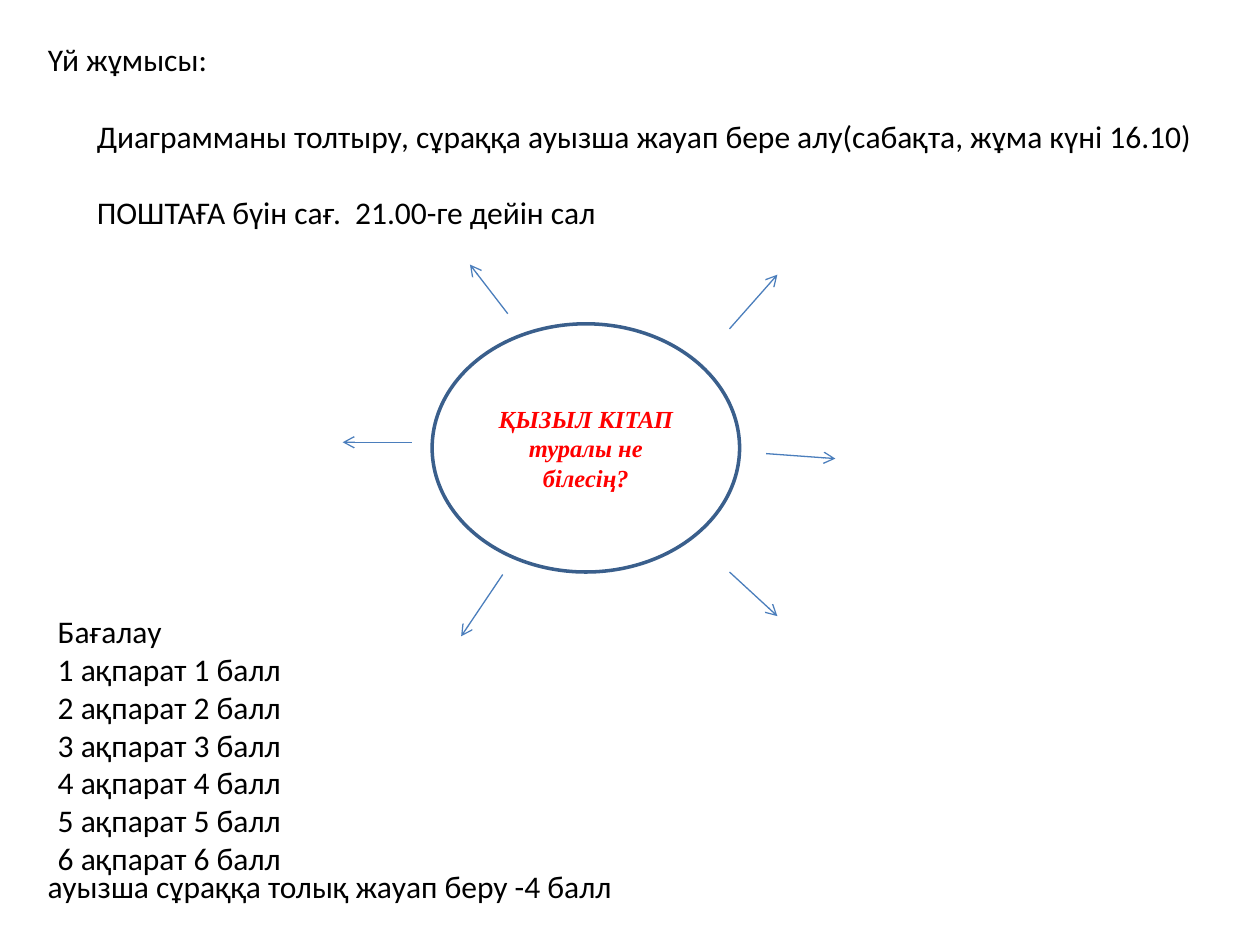
from lxml.etree import SubElement
from pptx import Presentation
from pptx.dml.color import RGBColor
from pptx.enum.shapes import MSO_CONNECTOR, MSO_SHAPE
from pptx.enum.text import MSO_ANCHOR, MSO_AUTO_SIZE, PP_ALIGN
from pptx.oxml.ns import qn
from pptx.util import Inches, Pt

COLORS = {"text": "000000", "accent": "FF0000", "paper": "FFFFFF",
          "outline": "3A5F8C", "arrow": "4B7EBC"}


def color(name):
    return RGBColor.from_string(COLORS[name])


class SlideBuilder:
    body_font = "Calibri"
    body_size = Pt(18)

    def __init__(self, slide):
        self.slide = slide

    def fill_text(self, frame, lines, gap):
        frame.word_wrap = False
        frame.auto_size = MSO_AUTO_SIZE.NONE
        frame.vertical_anchor = MSO_ANCHOR.TOP
        frame.text = "\n".join(lines)
        for index, paragraph in enumerate(frame.paragraphs):
            paragraph.alignment = PP_ALIGN.LEFT
            if index and gap:
                paragraph.space_before = Pt(gap)
            font = paragraph.font
            font.name, font.size = self.body_font, self.body_size
            font.color.rgb = color("text")

    def title(self, text, left, top, width, height):
        shape = self.slide.shapes.title
        shape.left, shape.top = Inches(left), Inches(top)
        shape.width, shape.height = Inches(width), Inches(height)
        self.fill_text(shape.text_frame, [text], 0)

    def text(self, lines, left, top, width, height, gap=0):
        box = self.slide.shapes.add_textbox(
            Inches(left), Inches(top), Inches(width), Inches(height))
        self.fill_text(box.text_frame, lines, gap)

    def ellipse(self, text, left, top, width, height):
        shape = self.slide.shapes.add_shape(
            MSO_SHAPE.OVAL, Inches(left), Inches(top), Inches(width), Inches(height))
        shape.shadow.inherit = False
        shape.fill.solid()
        shape.fill.fore_color.rgb = color("paper")
        shape.line.color.rgb = color("outline")
        shape.line.width = Pt(2)
        frame = shape.text_frame
        frame.word_wrap = True
        frame.vertical_anchor = MSO_ANCHOR.MIDDLE
        frame.text = text
        paragraph = frame.paragraphs[0]
        paragraph.alignment = PP_ALIGN.CENTER
        font = paragraph.font
        font.name, font.size = "Times New Roman", Pt(14)
        font.bold = font.italic = True
        font.color.rgb = color("accent")

    def arrow(self, start, end):
        connector = self.slide.shapes.add_connector(
            MSO_CONNECTOR.STRAIGHT, *map(Inches, start + end))
        connector.line.color.rgb = color("arrow")
        connector.line.width = Pt(0.75)
        SubElement(connector.line._get_or_add_ln(), qn("a:tailEnd"), type="arrow")
        SubElement(connector._element.spPr, qn("a:effectLst"))


def main():
    presentation = Presentation()
    presentation.slide_width, presentation.slide_height = Inches(10), Inches(7.5)
    builder = SlideBuilder(presentation.slides.add_slide(presentation.slide_layouts[5]))

    # Homework heading and task
    builder.title("Үй жұмысы:", 0.28, 0.27, 1.49, 0.4)
    builder.text(["Диаграмманы толтыру, сұраққа ауызша жауап бере алу(сабақта, жұма күні 16.10)",
                  "ПОШТАҒА бүін сағ.  21.00-ге дейін сал"],
                 0.67, 0.88, 8.93, 1.01, gap=22)

    # Central question with arrows pointing outwards
    builder.ellipse("ҚЫЗЫЛ КІТАП туралы не білесің?", 3.43, 2.57, 2.44, 1.97)
    for start, end in [((5.79, 2.61), (6.17, 2.18)), ((6.08, 3.6), (6.63, 3.64)),
                       ((4.03, 2.49), (3.73, 2.1)), ((3.27, 3.51), (2.72, 3.51)),
                       ((3.99, 4.56), (3.66, 5.05)), ((5.79, 4.54), (6.17, 4.89))]:
        builder.arrow(start, end)

    # Grading scale
    scores = [f"{count} ақпарат {count} балл" for count in range(1, 7)]
    builder.text(["Бағалау"] + scores, 0.36, 4.81, 2.03, 2.22)
    builder.text(["ауызша сұраққа толық жауап беру -4 балл"], 0.28, 6.83, 4.86, 0.4)

    presentation.save("out.pptx")


if __name__ == "__main__":
    main()
